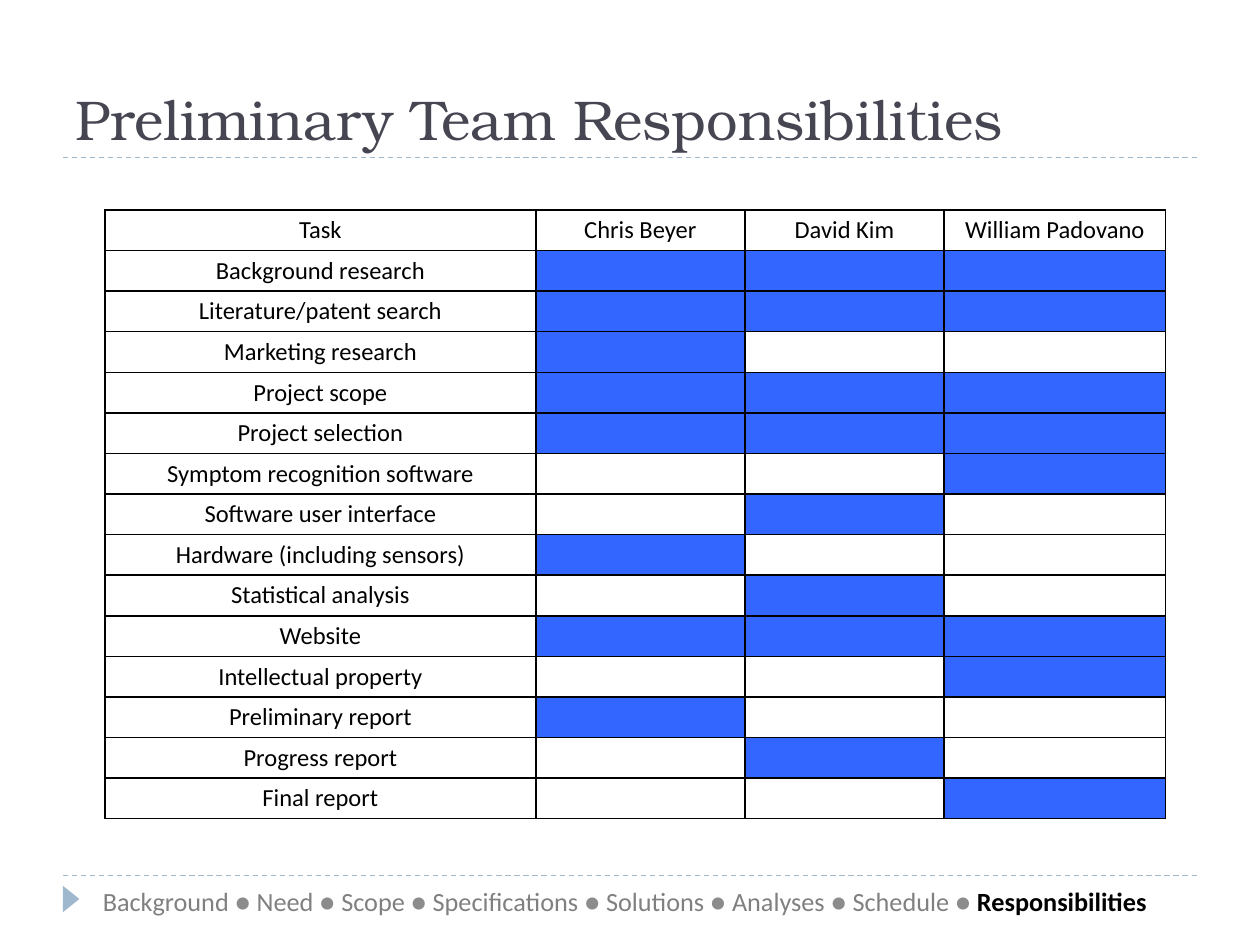
"""Build the slide showing which team member is responsible for each task."""
from lxml import etree
from pptx import Presentation
from pptx.dml.color import RGBColor
from pptx.enum import dml, shapes, text
from pptx.oxml import ns
from pptx.util import Pt

BLACK = RGBColor(0x00, 0x00, 0x00)
WHITE = RGBColor(0xFF, 0xFF, 0xFF)
BLUE = RGBColor(0x33, 0x66, 0xFF)
ACCENT = RGBColor(0x9F, 0xB8, 0xCD)
SLATE = RGBColor(0x46, 0x46, 0x53)
GREY = RGBColor(0x80, 0x80, 0x80)
DOT_GREY = RGBColor(0x8C, 0x8C, 0x8C)

MEMBERS = ["Chris Beyer", "David Kim", "William Padovano"]
TASKS = [
    ("Background research", "CDW"),
    ("Literature/patent search", "CDW"),
    ("Marketing research", "C"),
    ("Project scope", "CDW"),
    ("Project selection", "CDW"),
    ("Symptom recognition software", "W"),
    ("Software user interface", "D"),
    ("Hardware (including sensors)", "C"),
    ("Statistical analysis", "D"),
    ("Website", "CDW"),
    ("Intellectual property", "W"),
    ("Preliminary report", "C"),
    ("Progress report", "D"),
    ("Final report", "W"),
]
SECTIONS = ["Background", "Need", "Scope", "Specifications", "Solutions",
            "Analyses", "Schedule", "Responsibilities"]


def style(run, font, size, color, bold=False):
    run.font.name = font
    run.font.size = Pt(size)
    run.font.color.rgb = color
    run.font.bold = bold


def add_borders(cell):
    properties = cell._tc.get_or_add_tcPr()
    for position, side in enumerate(("lnL", "lnR", "lnT", "lnB")):
        border = etree.Element(ns.qn(f"a:{side}"), w=str(Pt(1)))
        solid = etree.SubElement(border, ns.qn("a:solidFill"))
        etree.SubElement(solid, ns.qn("a:srgbClr"), val=str(BLACK))
        properties.insert(position, border)


prs = Presentation()
prs.slide_width, prs.slide_height = Pt(720), Pt(540)
slide = prs.slides.add_slide(prs.slide_layouts[6])

for y in (500.4, 90):
    rule = slide.shapes.add_connector(
        shapes.MSO_CONNECTOR.STRAIGHT, Pt(36), Pt(y), Pt(684), Pt(y))
    rule.line.color.rgb = ACCENT
    rule.line.width = Pt(0.75)
    rule.line.dash_style = dml.MSO_LINE.DASH
    etree.SubElement(rule._element.spPr, ns.qn("a:effectLst"))

marker = slide.shapes.add_shape(
    shapes.MSO_SHAPE.ISOSCELES_TRIANGLE, Pt(33.1), Pt(509), Pt(15.1), Pt(9.4))
marker.rotation = 90
marker.shadow.inherit = False
marker.fill.solid()
marker.fill.fore_color.rgb = ACCENT
marker.line.fill.background()

title = slide.shapes.add_textbox(Pt(36), Pt(12), Pt(648), Pt(78)).text_frame
title.word_wrap = True
title.vertical_anchor = text.MSO_ANCHOR.BOTTOM
title.text = "Preliminary Team Responsibilities"
style(title.paragraphs[0].runs[0], "TeX Gyre Bonum", 32, SLATE)

column_widths = [246.2, 119.5, 113.8, 126.7]
row_height = 23.2
rows = len(TASKS) + 1
matrix = slide.shapes.add_table(
    rows, len(column_widths), Pt(60), Pt(120),
    Pt(sum(column_widths)), Pt(rows * row_height)).table
matrix.first_row = matrix.horz_banding = False
for column, width in zip(matrix.columns, column_widths):
    column.width = Pt(width)
for row in matrix.rows:
    row.height = Pt(row_height)

labels = [["Task", *MEMBERS]] + [[task, "", "", ""] for task, _ in TASKS]
for r, row_labels in enumerate(labels):
    for c, label in enumerate(row_labels):
        cell = matrix.cell(r, c)
        assigned = r > 0 and c > 0 and MEMBERS[c - 1][0] in TASKS[r - 1][1]
        cell.fill.solid()
        cell.fill.fore_color.rgb = BLUE if assigned else WHITE
        cell.margin_left = cell.margin_right = Pt(5)
        cell.margin_top = cell.margin_bottom = 0
        cell.vertical_anchor = text.MSO_ANCHOR.MIDDLE
        add_borders(cell)
        if label:
            cell.text_frame.text = label
            entry = cell.text_frame.paragraphs[0]
            entry.alignment = text.PP_ALIGN.CENTER
            style(entry.runs[0], "Calibri", 14, BLACK)

footer = slide.shapes.add_textbox(Pt(24), Pt(500.4), Pt(666), Pt(28.8)).text_frame
footer.word_wrap = True
footer.vertical_anchor = text.MSO_ANCHOR.MIDDLE
trail = footer.paragraphs[0]
trail.alignment = text.PP_ALIGN.CENTER
for section in SECTIONS:
    current = section == SECTIONS[-1]
    name = trail.add_run()
    name.text = section
    style(name, "Calibri", 15, BLACK if current else GREY, current)
    if not current:
        dot = trail.add_run()
        dot.text = " ● "
        style(dot, "Calibri", 15, DOT_GREY)

prs.save("out.pptx")
